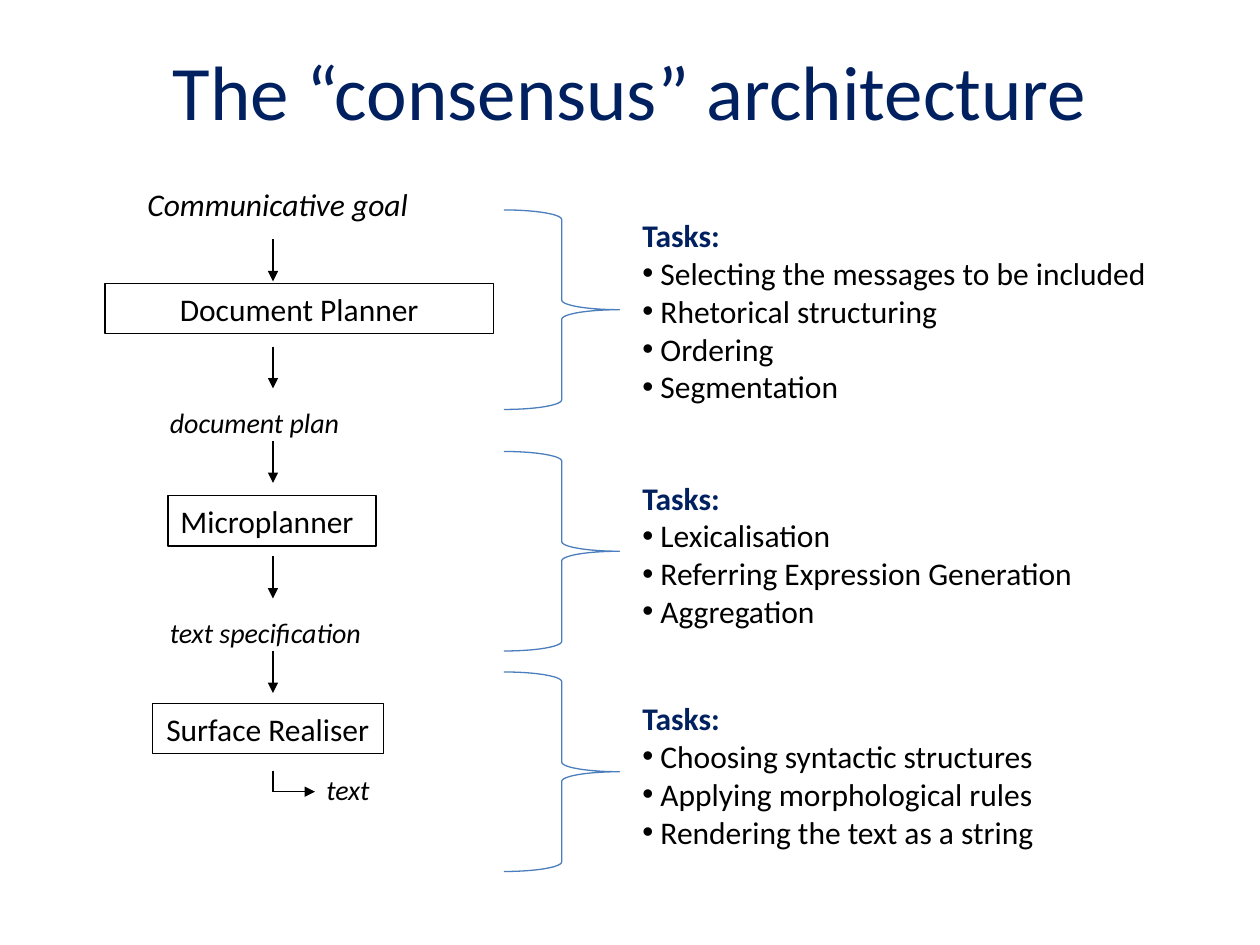
from lxml.etree import SubElement
from pptx import Presentation
from pptx.dml.color import RGBColor
from pptx.enum.shapes import MSO_CONNECTOR as Connector, MSO_SHAPE as Shape
from pptx.enum.text import MSO_ANCHOR as Anchor, PP_ALIGN as Align
from pptx.oxml.ns import qn
from pptx.util import Inches, Pt

NAVY = RGBColor(0x00, 0x20, 0x60)
BLACK = RGBColor(0x00, 0x00, 0x00)
BLUE = RGBColor(0x4B, 0x7E, 0xBC)

COLUMNS, ROWS = 120, 90  # grid cells of a twelfth of an inch
CELL = Inches(10) // COLUMNS
FLOW_X = 26
BRACE_X, TASKS_X = 48, 60
BOX_HEIGHT, LABEL_HEIGHT = 4.8, 4.4

BODY = {"name": "Calibri", "size": Pt(18), "bold": False, "italic": False}
TITLE = {**BODY, "size": Pt(44)}
GOAL = {**BODY, "italic": True}
LABEL = {**GOAL, "size": Pt(16)}
HEADING = {**BODY, "bold": True}

# text, left, top, width, alignment
STAGES = [
    ("Document Planner", 10, 27, 37, Align.CENTER),
    ("Microplanner", 16, 47.2, 19.8, Align.LEFT),
    ("Surface Realiser", 14.5, 67, 22, Align.CENTER),
]
# text, left, top, width
RESULTS = [
    ("document plan", 15, 38, 22.3),
    ("text specification", 15, 58, 25.1),
    ("text", 29.9, 73, 7.7),
]
ARROW_TOPS = [22.8, 33, 42, 53, 62]
ARROW_LENGTH = 4
# brace top, list top, list width, tasks
TASK_GROUPS = [
    (20, 20, 51, ["Selecting the messages to be included", "Rhetorical structuring",
                  "Ordering", "Segmentation"]),
    (43, 45, 43.8, ["Lexicalisation", "Referring Expression Generation", "Aggregation"]),
    (64, 66, 40, ["Choosing syntactic structures", "Applying morphological rules",
                  "Rendering the text as a string"]),
]


def cells(*counts):
    return [round(count * CELL) for count in counts]


def write(paragraph, text, style, color=BLACK, align=Align.LEFT):
    paragraph.alignment = align
    run = paragraph.add_run()
    run.text = text
    for attribute, value in style.items():
        setattr(run.font, attribute, value)
    run.font.color.rgb = color


def add_text(slide, area, text, style, color=BLACK, align=Align.LEFT, wrap=False):
    frame = slide.shapes.add_textbox(*cells(*area)).text_frame
    frame.word_wrap = wrap
    write(frame.paragraphs[0], text, style, color, align)
    return frame


def add_outline(slide, kind, area, color):
    """Add an unfilled preset shape with a thin line."""
    outline = slide.shapes.add_shape(kind, *cells(*area))
    outline.shadow.inherit = False
    outline.fill.background()
    outline.line.color.rgb = color
    outline.line.width = Pt(0.75)
    return outline


def add_stage(slide, text, left, top, width, align):
    stage = add_outline(slide, Shape.RECTANGLE, (left, top, width, BOX_HEIGHT), BLACK)
    frame = stage.text_frame
    frame.word_wrap = align == Align.CENTER
    frame.vertical_anchor = Anchor.TOP
    write(frame.paragraphs[0], text, BODY, align=align)


def add_line(slide, start, end, arrow=True):
    line = slide.shapes.add_connector(Connector.STRAIGHT, *cells(*start, *end))
    line.line.color.rgb = BLACK
    line.line.width = Pt(0.75)
    properties = line._element.spPr
    if arrow:
        SubElement(properties.find(qn("a:ln")), qn("a:tailEnd"), type="triangle")
    SubElement(properties, qn("a:effectLst"))


def add_tasks(slide, brace_top, list_top, width, tasks):
    add_outline(slide, Shape.RIGHT_BRACE, (BRACE_X, brace_top, 11, 19), BLUE)
    height = 1.2 + 3.64 * (len(tasks) + 1)
    frame = add_text(slide, (TASKS_X, list_top, width, height), "Tasks:", HEADING, NAVY)
    for task in tasks:
        paragraph = frame.add_paragraph()
        write(paragraph, f" {task}", BODY)
        properties = paragraph._p.get_or_add_pPr()
        SubElement(properties, qn("a:buFont"), typeface="Arial")
        SubElement(properties, qn("a:buChar"), char="•")


def main():
    deck = Presentation()
    deck.slide_width, deck.slide_height = cells(COLUMNS, ROWS)
    slide = deck.slides.add_slide(deck.slide_layouts[6])

    title = add_text(slide, (6, 1, 108, 15), "The “consensus” architecture",
                     TITLE, NAVY, Align.CENTER, wrap=True)
    title.vertical_anchor = Anchor.MIDDLE

    add_text(slide, (12.7, 17, 27.5, BOX_HEIGHT), "Communicative goal", GOAL,
             align=Align.CENTER)
    for stage in STAGES:
        add_stage(slide, *stage)
    for text, left, top, width in RESULTS:
        add_text(slide, (left, top, width, LABEL_HEIGHT), text, LABEL)

    for top in ARROW_TOPS:
        add_line(slide, (FLOW_X, top), (FLOW_X, top + ARROW_LENGTH))
    corner = (FLOW_X, 75.4)
    add_line(slide, (FLOW_X, 73.4), corner, arrow=False)
    add_line(slide, corner, (FLOW_X + ARROW_LENGTH, 75.4))

    for group in TASK_GROUPS:
        add_tasks(slide, *group)
    deck.save("out.pptx")


if __name__ == "__main__":
    main()
